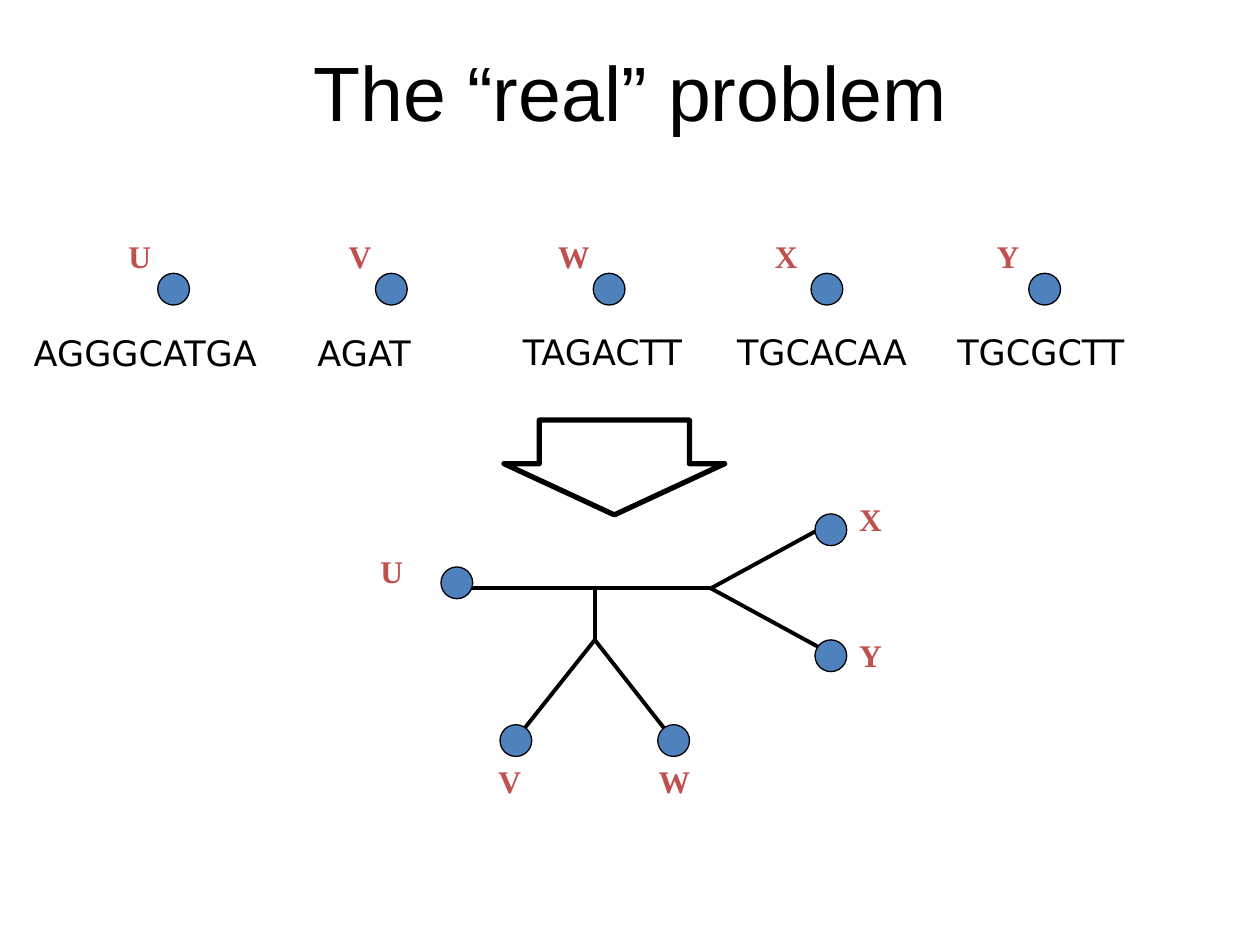
from pptx import Presentation
from pptx.dml.color import RGBColor
from pptx.enum.shapes import MSO_CONNECTOR as Link, MSO_SHAPE as Form
from pptx.enum.text import MSO_ANCHOR as Anchor, MSO_AUTO_SIZE as Fit, PP_ALIGN as Align
from pptx.oxml.ns import qn
from pptx.util import Cm, Pt
from lxml.etree import SubElement

BLACK = RGBColor(0x00, 0x00, 0x00)
BLUE = RGBColor(0x4F, 0x81, 0xBD)
RED = RGBColor(0xC0, 0x50, 0x4D)

HEAD = {"name": "Arial", "size": Pt(44), "bold": False}
BASES = {"name": "DejaVu Sans", "size": Pt(20), "bold": False}
LABEL = {"name": "Times New Roman", "size": Pt(18), "bold": True}

DOT = 0.64
FIRST, STEP, ROW = 3.18, 4.39, 5.51

TAXA = [
    ("U", 2.34, "AGGGCATGA", 0.43, 6.55, 5.08),
    ("V", 6.78, "AGAT", 6.15, 6.55, 2.46),
    ("W", 11, "TAGACTT", 10.29, 6.53, 3.81),
    ("X", 15.37, "TGCACAA", 14.61, 6.53, 3.94),
    ("Y", 19.84, "TGCGCTT", 19.05, 6.53, 3.89),
]

LEAVES = [
    ("U", (7.42, 11), (8.89, 11.43)),
    ("V", (9.8, 15.24), (10.08, 14.61)),
    ("W", (13.03, 15.24), (13.26, 14.61)),
    ("X", (17.07, 9.96), (16.43, 10.36)),
    ("Y", (17.07, 12.7), (16.43, 12.9)),
]

STEM, FORK, SPLIT = (11.99, 11.86), (11.99, 12.9), (14.33, 11.86)
EDGES = [
    ((10.29, 15.04), FORK),
    ((13.67, 15.04), FORK),
    (SPLIT, (9.32, 11.86)),
    (STEM, FORK),
    ((16.66, 13.13), SPLIT),
    ((16.66, 10.59), SPLIT),
]


def style(run, form, color):
    for key, value in form.items():
        setattr(run.font, key, value)
    run.font.color.rgb = color


def add_title(slide, text):
    title = slide.shapes.title
    place = {"left": 1.91, "top": 0.23, "width": 21.59, "height": 3.18}
    for key, value in place.items():
        setattr(title, key, Cm(value))
    frame = title.text_frame
    frame.vertical_anchor = Anchor.MIDDLE
    para = frame.paragraphs[0]
    para.alignment = Align.CENTER
    run = para.add_run()
    run.text = text
    style(run, HEAD, BLACK)


def add_text(slide, text, left, top, width, height, form, color):
    box = slide.shapes.add_textbox(Cm(left), Cm(top), Cm(width), Cm(height))
    frame = box.text_frame
    frame.word_wrap = False
    frame.auto_size = Fit.SHAPE_TO_FIT_TEXT
    run = frame.paragraphs[0].add_run()
    run.text = text
    style(run, form, color)


def add_label(slide, name, left, top):
    width = 1.35 if name == "W" else 1.12
    add_text(slide, name, left, top, width, 1.27, LABEL, RED)


def add_dot(slide, left, top):
    dot = slide.shapes.add_shape(Form.OVAL, Cm(left), Cm(top), Cm(DOT), Cm(DOT))
    dot.shadow.inherit = False
    dot.fill.solid()
    dot.fill.fore_color.rgb = BLUE
    dot.line.color.rgb = BLACK
    dot.line.width = Pt(0.75)


def add_edge(slide, start, end):
    ends = [Cm(value) for value in start + end]
    edge = slide.shapes.add_connector(Link.STRAIGHT, *ends)
    edge.line.color.rgb = BLACK
    edge.line.width = Pt(2.25)
    SubElement(edge._element.spPr, qn("a:effectLst"))


def add_arrow(slide):
    arrow = slide.shapes.add_shape(Form.DOWN_ARROW, Cm(10.16), Cm(8.47), Cm(4.45), Cm(1.91))
    arrow.shadow.inherit = False
    arrow.adjustments[0] = 0.68
    arrow.adjustments[1] = 0.54
    arrow.fill.background()
    arrow.line.color.rgb = BLACK
    arrow.line.width = Pt(3)


def main():
    deck = Presentation()
    deck.slide_width, deck.slide_height = Cm(25.4), Cm(19.05)
    slide = deck.slides.add_slide(deck.slide_layouts[5])
    add_title(slide, "The “real” problem")
    for start, end in EDGES:
        add_edge(slide, start, end)
    for spot, (name, x, bases, left, top, width) in enumerate(TAXA):
        add_text(slide, bases, left, top, width, 1.09, BASES, BLACK)
        add_dot(slide, FIRST + spot * STEP, ROW)
        add_label(slide, name, x, 4.65)
    add_arrow(slide)
    for name, tag, dot in LEAVES:
        add_label(slide, name, *tag)
        add_dot(slide, *dot)
    deck.save("out.pptx")


if __name__ == "__main__":
    main()
